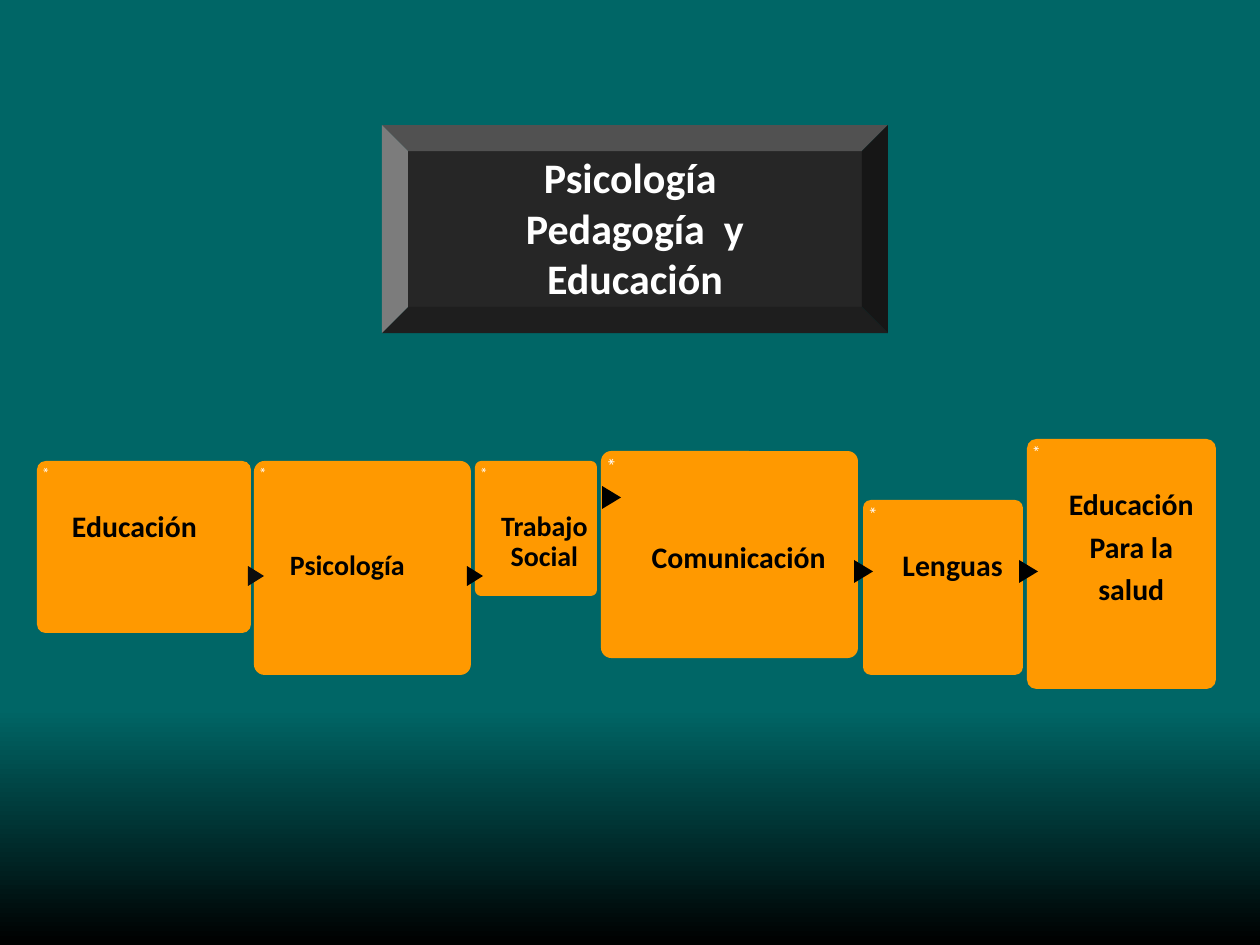
"""Build the slide on psychology, pedagogy and education."""
from lxml.etree import SubElement as Sub
from pptx import Presentation as Deck
from pptx.dml.color import RGBColor as RGB
from pptx.enum.shapes import MSO_SHAPE as Kind
from pptx.enum.text import MSO_AUTO_SIZE as Fit, PP_ALIGN as Align
from pptx.oxml.ns import qn
from pptx.util import Emu, Pt

HUES = {"teal": "006666", "card": "FF9900", "plate": "262626",
        "dark": "000000", "soft": "0D0D0D", "light": "FFFFFF"}
SCALE = 914400 / 126


def draw(kind, box, hue, turn=0):
    item = slide.shapes.add_shape(kind, *[Emu(round(n * SCALE)) for n in box])
    item.shadow.inherit = False
    item.fill.solid()
    item.fill.fore_color.rgb = RGB.from_string(HUES[hue])
    item.line.fill.background()
    item.rotation = turn
    return item


def write(box, lines, size, hue, align, pads, turn=0, bold=True, wrap=True, form=None):
    item = slide.shapes.add_textbox(*[Emu(round(n * SCALE)) for n in box])
    item.rotation = turn
    frame = item.text_frame
    frame.word_wrap = wrap
    frame.auto_size = Fit.NONE if wrap else Fit.SHAPE_TO_FIT_TEXT
    for side, pad in zip(("left", "top", "right", "bottom"), pads):
        setattr(frame, "margin_" + side, Emu(round(pad * SCALE)))
    for i, line in enumerate(lines):
        para = frame.add_paragraph() if i else frame.paragraphs[0]
        for name, value in {"alignment": align, **(form or {})}.items():
            setattr(para, name, value)
        run = para.add_run()
        run.text = line
        for name, value in {"name": "Calibri", "size": Pt(size), "bold": bold}.items():
            setattr(run.font, name, value)
        run.font.color.rgb = RGB.from_string(HUES[hue])


deck = Deck()
deck.slide_width, deck.slide_height = Emu(round(1260 * SCALE)), Emu(round(945 * SCALE))
slide = deck.slides.add_slide(deck.slide_layouts[6])

back = slide.background.fill
back.gradient()
back.gradient_angle = 270
stops = next(slide.element.iter(qn("a:gsLst")))
for stop in list(stops):
    stops.remove(stop)
for spot, hue in ((0, "teal"), (25, "teal"), (75, "teal"), (100, "dark")):
    stop = Sub(stops, qn("a:gs"), pos=str(spot * 1000))
    Sub(stop, qn("a:srgbClr"), val=HUES[hue])

tight = {"line_spacing": 0.9, "space_after": Pt(6)}
mid, left = Align.CENTER, Align.LEFT
big, small = (23, 19), (20, 16)
cards = [
    ((601, 451, 257, 207), ["Comunicación"], 17, mid, 42, 92, 12, (600, 488, *big), "dark"),
    ((863, 500, 160, 175), ["Lenguas"], 17, mid, 30, 51, 11, (852, 562, *big), "dark"),
    ((1027, 439, 189, 250), ["Educación", "Para la", "salud"], 17, mid, 34, 51, 10,
     (1017, 562, *big), "dark"),
    ((37, 461, 214, 172), ["Educación"], 17, left, 35, 51, 9, None, None),
    ((254, 461, 217, 214), ["Psicología"], 16, left, 36, 90, 9, (246, 568, *small), "soft"),
    ((475, 461, 122, 135), ["Trabajo Social"], 16, mid, 24, 51, 9, (465, 568, *small), "dark"),
]
for box, lines, size, align, shift, drop, mark, tip, hue in cards:
    x, y, w, h = box
    draw(Kind.ROUNDED_RECTANGLE, box, "card").adjustments[0] = 0.05
    long, high = 0.82 * h, 0.2 * w
    write((x + (high - long) / 2, y + (long - high) / 2, long, high), ["*"], mark,
          "light", Align.RIGHT, (0, 4, 6, 0), turn=270, bold=False, form=tight)
    if tip:
        draw(Kind.FLOWCHART_EXTRACT, tip, hue, 90)
    write((x + shift, y, 0.745 * w, h), lines, size, "dark", align,
          (0, drop, 0, 0), form=tight)

draw(Kind.BEVEL, (382, 125, 506, 208), "plate")
write((505, 146, 260, 165), ["Psicología ", "Pedagogía  y", "Educación"], 24,
      "light", mid, (13, 6, 13, 6), wrap=False)

deck.save("out.pptx")
